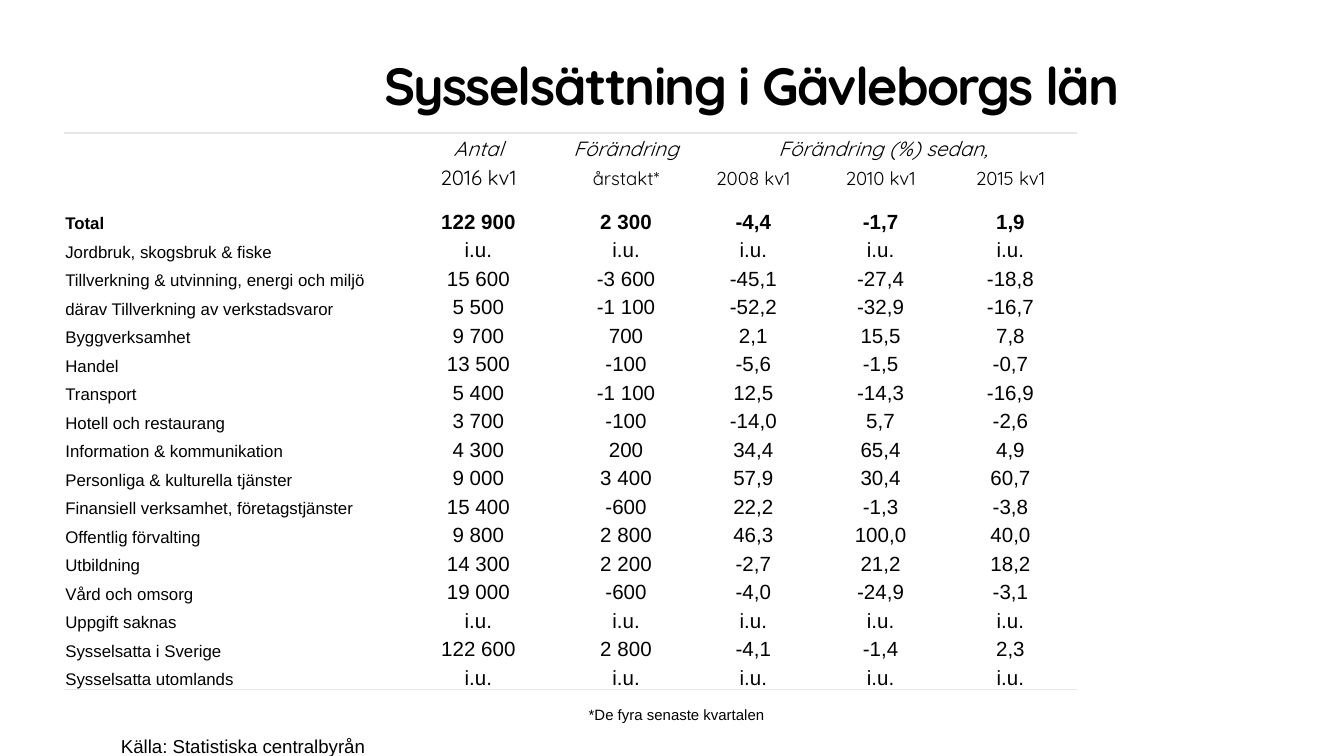
from dataclasses import dataclass

from pptx import Presentation
from pptx.dml.color import RGBColor as RGB
from pptx.enum.text import MSO_ANCHOR as Anchor, PP_ALIGN as Align
from pptx.oxml.ns import qn
from pptx.util import Pt
from lxml.etree import SubElement as Sub

TITLE = "Sysselsättning i Gävleborgs län"
SOURCE = "Källa: Statistiska centralbyrån"
NOTE = "*De fyra senaste kvartalen"
ROWS = [
    ("", "Antal", "Förändring", "Förändring (%) sedan,", "", ""),
    ("", "2016 kv1", "årstakt*", "2008 kv1", "2010 kv1", "2015 kv1"),
    ("Total", "122 900", "2 300", "-4,4", "-1,7", "1,9"),
    ("Jordbruk, skogsbruk & fiske", "i.u.", "i.u.", "i.u.", "i.u.", "i.u."),
    ("Tillverkning & utvinning, energi och miljö", "15 600", "-3 600", "-45,1", "-27,4", "-18,8"),
    ("därav Tillverkning av verkstadsvaror", "5 500", "-1 100", "-52,2", "-32,9", "-16,7"),
    ("Byggverksamhet", "9 700", "700", "2,1", "15,5", "7,8"),
    ("Handel", "13 500", "-100", "-5,6", "-1,5", "-0,7"),
    ("Transport", "5 400", "-1 100", "12,5", "-14,3", "-16,9"),
    ("Hotell och restaurang", "3 700", "-100", "-14,0", "5,7", "-2,6"),
    ("Information & kommunikation", "4 300", "200", "34,4", "65,4", "4,9"),
    ("Personliga & kulturella tjänster", "9 000", "3 400", "57,9", "30,4", "60,7"),
    ("Finansiell verksamhet, företagstjänster", "15 400", "-600", "22,2", "-1,3", "-3,8"),
    ("Offentlig förvalting", "9 800", "2 800", "46,3", "100,0", "40,0"),
    ("Utbildning", "14 300", "2 200", "-2,7", "21,2", "18,2"),
    ("Vård och omsorg", "19 000", "-600", "-4,0", "-24,9", "-3,1"),
    ("Uppgift saknas", "i.u.", "i.u.", "i.u.", "i.u.", "i.u."),
    ("Sysselsatta i Sverige", "122 600", "2 800", "-4,1", "-1,4", "2,3"),
    ("Sysselsatta utomlands", "i.u.", "i.u.", "i.u.", "i.u.", "i.u."),
]
COLS = [177, 90, 68.2, 68.2, 68.2, 71]
ROW_H, TOTAL_H = 15.28, 23.04
TOTAL, LAST = 2, len(ROWS) - 1
PLAIN = "{2D5ABB26-0587-4C30-8999-92F81FD0307C}"


@dataclass
class Theme:
    ink: str = "000000"
    rule: str = "E6E6E6"
    head: str = "Quicksand"
    body: str = "Arial"
    title: float = 28
    value: float = 11
    year: float = 10
    label: float = 9
    note: float = 8


T = Theme()


def style(para, face, size, bold=False, slant=False):
    font = para.font
    font.name, font.size = face, Pt(size)
    font.bold, font.italic = bold, slant
    font.color.rgb = RGB.from_string(T.ink)


def label(slide, text, box, face, size, bold=False, wrap=False, lead=None):
    frame = slide.shapes.add_textbox(*map(Pt, box)).text_frame
    frame.margin_left = frame.margin_right = frame.margin_top = frame.margin_bottom = 0
    frame.word_wrap = wrap
    para = frame.paragraphs[0]
    para.text = text
    if lead:
        para.line_spacing = Pt(lead)
    style(para, face, size, bold)
    return para


def border(cell, side):
    line = Sub(cell._tc.get_or_add_tcPr(), qn("a:" + side), w=str(Pt(1)))
    fill = Sub(line, qn("a:solidFill"))
    Sub(fill, qn("a:srgbClr"), val=T.rule)


def fill_cell(cell, text, row, col):
    if row == 0:
        border(cell, "lnT")
    if row == LAST:
        border(cell, "lnB")
    cell.fill.background()
    cell.vertical_anchor = Anchor.BOTTOM
    cell.margin_left = cell.margin_right = cell.margin_top = Pt(0.72)
    cell.margin_bottom = 0
    para = cell.text_frame.paragraphs[0]
    if not text:
        Sub(para._p, qn("a:endParaRPr"), sz=str(T.label * 100))
        return
    para.text = text
    para.alignment = Align.CENTER if col else Align.LEFT
    size = T.value if col else T.label
    if row == 1 and col > 1:
        size = T.year
    face = T.head if row < TOTAL else T.body
    style(para, face, size, row == TOTAL, row == 0)


def add_grid(slide):
    high = ROW_H * LAST + TOTAL_H
    grid = slide.shapes.add_table(
        len(ROWS), len(COLS), Pt(34.3), Pt(71.4), Pt(sum(COLS)), Pt(high)
    ).table
    grid.first_row = grid.horz_banding = False
    grid._tbl.tblPr.find(qn("a:tableStyleId")).text = PLAIN
    for col, wide in zip(grid.columns, COLS):
        col.width = Pt(wide)
    for r, texts in enumerate(ROWS):
        grid.rows[r].height = Pt(TOTAL_H if r == TOTAL else ROW_H)
        for c, text in enumerate(texts):
            fill_cell(grid.cell(r, c), text, r, c)
    grid.cell(0, 3).merge(grid.cell(0, 5))


def main():
    deck = Presentation()
    deck.slide_width, deck.slide_height = Pt(720), Pt(405)
    slide = deck.slides.add_slide(deck.slide_layouts[6])
    title = label(slide, TITLE, (205.92, 28.8, 662.4, 57.6), T.head, T.title, True, True)
    title.runs[0]._r.get_or_add_rPr().set("spc", "-87")
    label(slide, SOURCE, (64.8, 381.6, 140, 30.24), T.body, T.year, wrap=True, lead=24)
    add_grid(slide)
    label(slide, NOTE, (315.36, 363.6, 110, 35.28), T.body, T.note, wrap=True, lead=24)
    deck.save("out.pptx")


if __name__ == "__main__":
    main()
